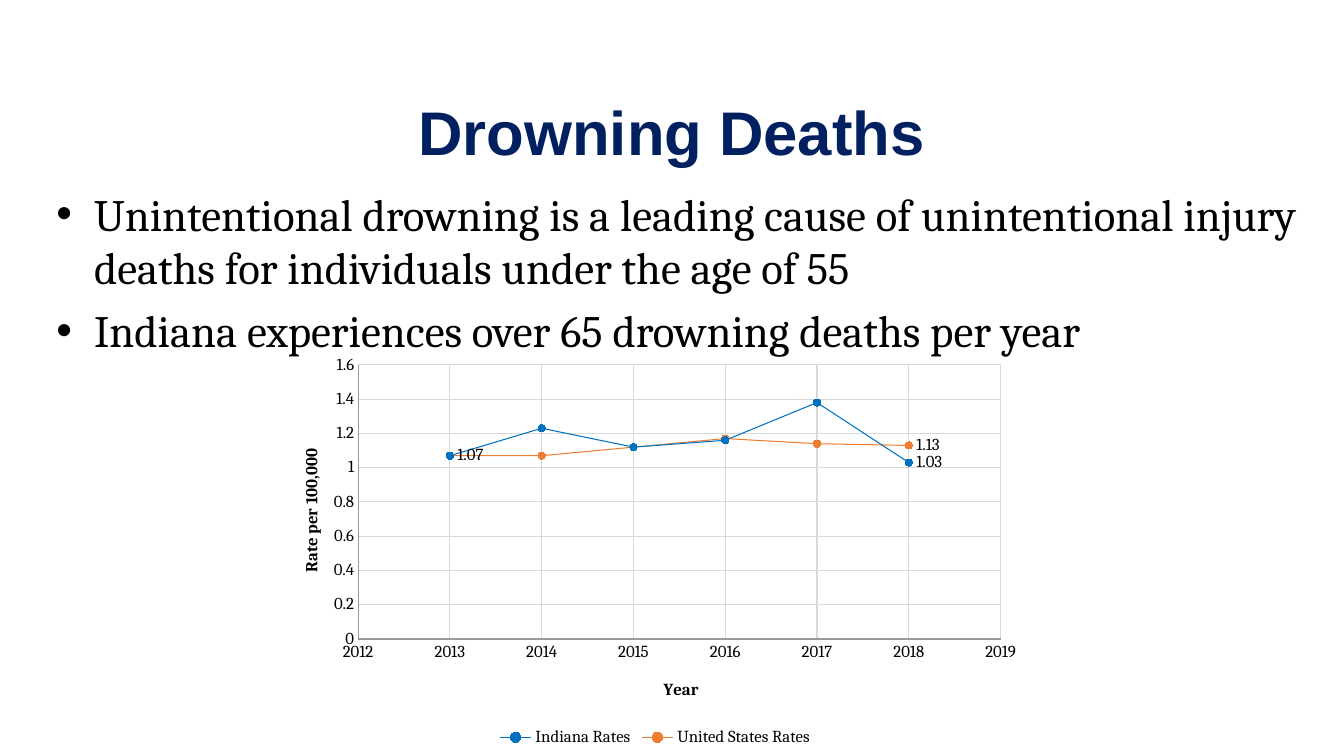
"""Build a slide on drowning deaths with a scatter chart of yearly rates."""
from dataclasses import dataclass

from lxml import etree
from pptx import Presentation
from pptx.chart.data import XyChartData
from pptx.dml.color import RGBColor
from pptx.enum.chart import (XL_CHART_TYPE, XL_LABEL_POSITION,
                             XL_LEGEND_POSITION, XL_MARKER_STYLE,
                             XL_TICK_MARK)
from pptx.enum.text import MSO_ANCHOR, PP_ALIGN
from pptx.oxml.ns import qn
from pptx.util import Cm, Pt

LINES = XL_CHART_TYPE.XY_SCATTER_LINES
RIGHT = XL_LABEL_POSITION.RIGHT
BOTTOM = XL_LEGEND_POSITION.BOTTOM
CIRCLE = XL_MARKER_STYLE.CIRCLE
NONE = XL_TICK_MARK.NONE
MIDDLE = MSO_ANCHOR.MIDDLE
CENTER = PP_ALIGN.CENTER


@dataclass(frozen=True)
class Theme:
    """Hold the fonts, type sizes and colours."""
    head: str = "Arial"
    body: str = "Cambria"
    big: int = 44
    text: int = 32
    small: int = 12
    hair: float = 0.75
    navy: str = "002060"
    black: str = "000000"
    axis: str = "999999"
    grid: str = "D9D9D9"
    blue: str = "0070C0"
    orange: str = "ED7D31"
    fire: str = "FF6600"


THEME = Theme()
YEARS = range(2013, 2019)
POINTS = [
    "Unintentional drowning is a leading cause of unintentional injury "
    "deaths for individuals under the age of 55",
    "Indiana experiences over 65 drowning deaths per year",
]
RATES = [
    ("Indiana Rates", [1.07, 1.23, 1.12, 1.16, 1.38, 1.03],
     THEME.blue, THEME.blue, [5]),
    ("United States Rates", [1.07, 1.07, 1.12, 1.17, 1.14, 1.13],
     THEME.orange, THEME.fire, [0, 5]),
]


def style(font, name, size, color, bold=False):
    """Set the face, size, colour and weight of a font."""
    font.name, font.size, font.bold = name, Pt(size), bold
    font.color.rgb = RGBColor.from_string(color)


def stroke(line, color):
    """Give a line a thin solid colour."""
    line.color.rgb = RGBColor.from_string(color)
    line.width = Pt(THEME.hair)


def add_title(slide, text):
    """Place and fill the title."""
    title = slide.shapes.title
    title.left, title.top = Cm(1.63), Cm(1.5)
    title.width, title.height = Cm(30.61), Cm(3.61)
    frame = title.text_frame
    frame.text = text
    frame.vertical_anchor = MIDDLE
    para = frame.paragraphs[0]
    para.alignment = CENTER
    style(para.font, THEME.head, THEME.big, THEME.navy, True)


def add_list(slide, items):
    """Add the bulleted text."""
    box = slide.shapes.add_textbox(Cm(1.17), Cm(4.57), Cm(32.31), Cm(12.78))
    frame = box.text_frame
    frame.word_wrap = True
    frame.text = "\n".join(items)
    for para in frame.paragraphs:
        para.space_before = Pt(THEME.text * 0.2)
        props = para._p.get_or_add_pPr()
        props.set("marL", str(Cm(0.95)))
        props.set("indent", str(-Cm(0.95)))
        etree.SubElement(props, qn("a:buFont"), typeface=THEME.head)
        etree.SubElement(props, qn("a:buChar"), char="•")
        style(para.font, THEME.body, THEME.text, THEME.black)


def pin(part, left, top, size=None):
    """Fix a chart part at fractions of the chart area."""
    for old in part.findall(qn("c:layout")):
        part.remove(old)
    layout = etree.Element(qn("c:layout"))
    spot = etree.SubElement(layout, qn("c:manualLayout"))
    rules = [("xMode", "edge"), ("yMode", "edge"), ("x", left), ("y", top)]
    if size:
        rules.insert(0, ("layoutTarget", "inner"))
        rules += [("w", size[0]), ("h", size[1])]
    for tag, value in rules:
        etree.SubElement(spot, qn(f"c:{tag}"), val=str(value))
    lead = part.find(qn("c:tx"))
    if lead is None:
        lead = part.find(qn("c:legendPos"))
    if lead is None:
        part.insert(0, layout)
    else:
        lead.addnext(layout)


def set_axis(axis, text, low, high, step, spot):
    """Scale, title and colour one axis."""
    axis.minimum_scale, axis.maximum_scale = low, high
    axis.major_unit = step
    axis.major_tick_mark = axis.minor_tick_mark = NONE
    axis.has_major_gridlines = True
    stroke(axis.major_gridlines.format.line, THEME.grid)
    stroke(axis.format.line, THEME.axis)
    labels = axis.tick_labels
    labels.number_format, labels.number_format_is_linked = "General", False
    style(labels.font, THEME.body, THEME.small, THEME.black)
    frame = axis.axis_title.text_frame
    frame.text = text
    style(frame.paragraphs[0].font, THEME.body, THEME.small, THEME.black, True)
    pin(axis.axis_title._element, *spot)


def set_series(series, color, fill, tags):
    """Colour one series and label the chosen points."""
    series.smooth = False
    stroke(series.format.line, color)
    mark = series.marker
    mark.style, mark.size = CIRCLE, 5
    mark.format.fill.solid()
    mark.format.fill.fore_color.rgb = RGBColor.from_string(fill)
    stroke(mark.format.line, fill)
    for tag in tags:
        label = series.points[tag].data_label
        style(label.font, THEME.body, THEME.small, THEME.black)
        label.position = RIGHT


def add_rates(slide):
    """Add the chart of rates by year."""
    data = XyChartData()
    for name, values, *_ in RATES:
        series = data.add_series(name)
        for year, value in zip(YEARS, values):
            series.add_data_point(year, value)
    frame = slide.shapes.add_chart(
        LINES, Cm(6.93), Cm(8.79), Cm(19.05), Cm(10.16), data)
    chart = frame.chart
    chart.has_title = False
    style(chart.font, THEME.body, THEME.small, THEME.black)
    chart.plots[0].vary_by_categories = False
    set_axis(chart.category_axis, "Year", 2012, 2019, 1, (0.51, 0.81))
    set_axis(chart.value_axis, "Rate per 100,000", 0, 1.6, 0.2, (0.03, 0.24))
    for series, (_, _, *look) in zip(chart.plots[0].series, RATES):
        set_series(series, *look)
    chart.has_legend = True
    legend = chart.legend
    legend.position, legend.include_in_layout = BOTTOM, False
    style(legend.font, THEME.body, THEME.small, THEME.black)
    pin(legend._element, 0.29, 0.94)
    pin(chart._chartSpace.chart.plotArea, 0.11, 0.04, (0.85, 0.68))


def main():
    """Build and save the slide."""
    deck = Presentation()
    deck.slide_width, deck.slide_height = Cm(33.87), Cm(19.05)
    slide = deck.slides.add_slide(deck.slide_layouts[5])
    add_title(slide, "Drowning Deaths")
    add_list(slide, POINTS)
    add_rates(slide)
    deck.save("out.pptx")


if __name__ == "__main__":
    main()
